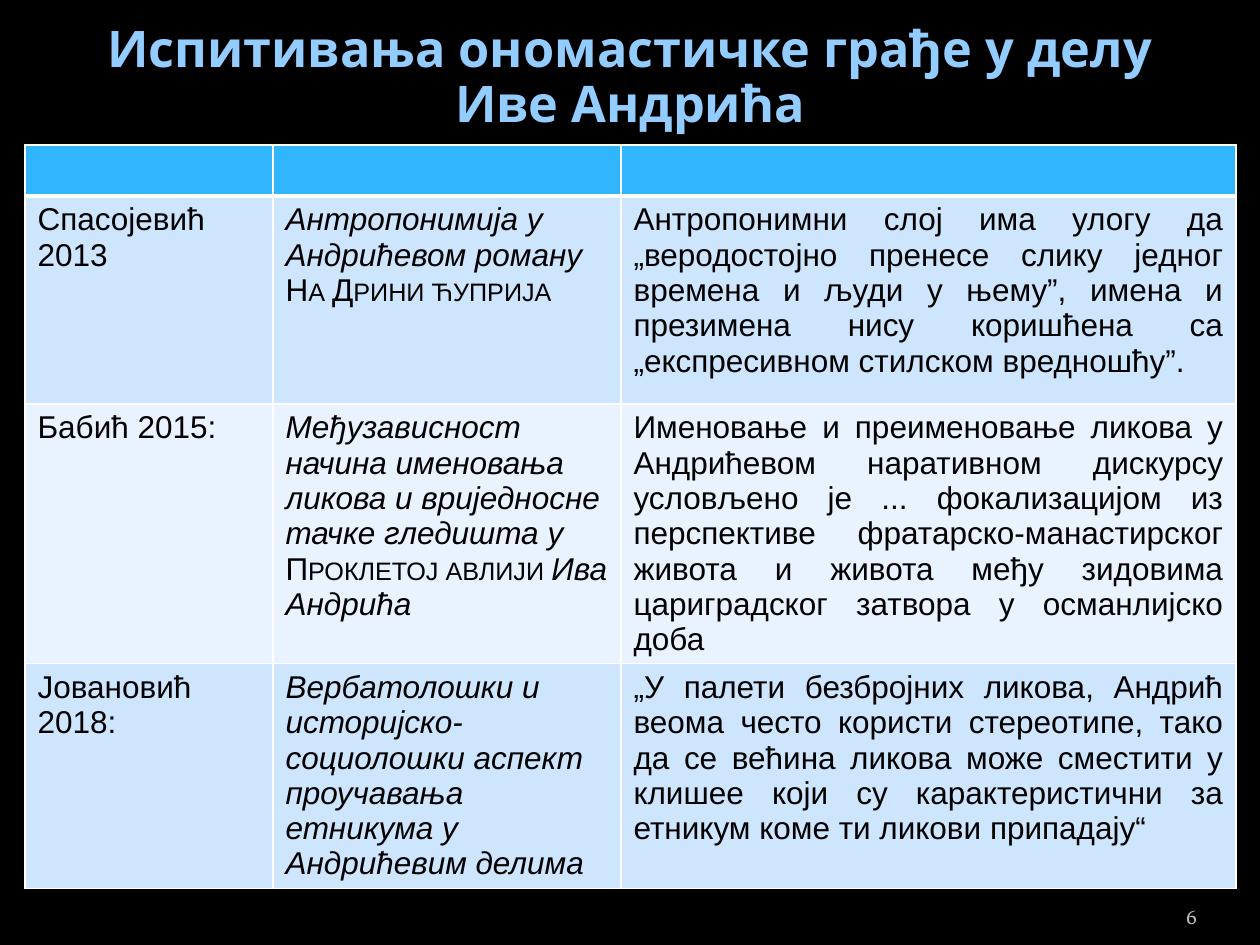
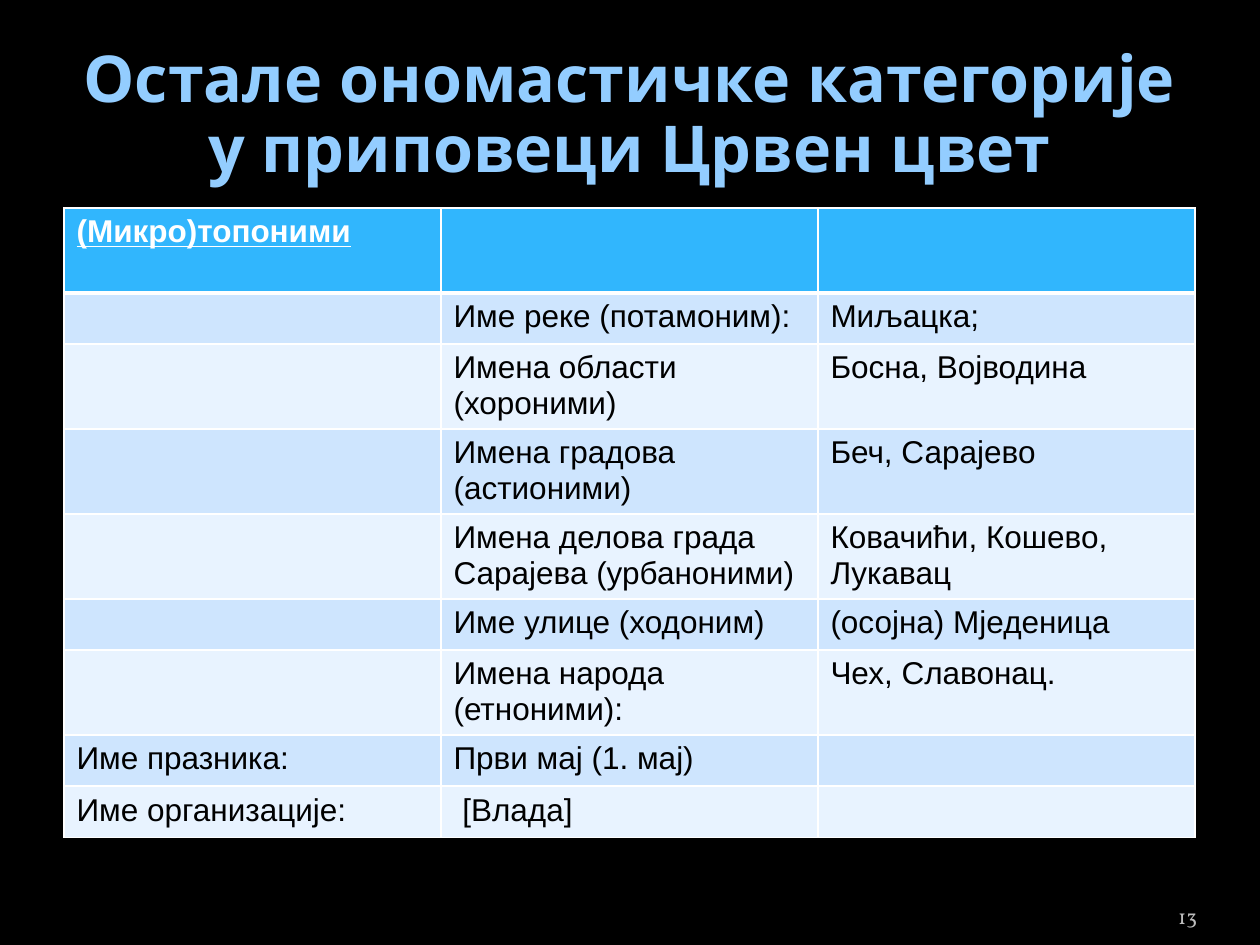
"""Builds two slides with tables on onomastic research in literary works."""
from lxml import etree
from pptx import Presentation
from pptx.dml.color import RGBColor
from pptx.enum.text import MSO_ANCHOR, MSO_AUTO_SIZE, PP_ALIGN
from pptx.oxml.ns import qn
from pptx.util import Pt

CENTER, RIGHT, JUSTIFY = PP_ALIGN.CENTER, PP_ALIGN.RIGHT, PP_ALIGN.JUSTIFY
MIDDLE, BOTTOM = MSO_ANCHOR.MIDDLE, MSO_ANCHOR.BOTTOM
NO_AUTOFIT = MSO_AUTO_SIZE.NONE
COLORS = {
    "background": "000000", "title": "93CDFF", "header": "31B6FD",
    "odd": "CEE5FE", "even": "E8F3FF", "rule": "FFFFFF",
    "header_text": "FFFFFF", "cell_text": "000000", "number": "BDBDBD",
}
TITLE_FONT, TABLE_FONT, NUMBER_FONT = "Open Sans", "Arial", "Vollkorn"
TITLE_ONLY = 5
PX_PER_INCH = 126


def px(length):
    return round(length * 914400 / PX_PER_INCH)


class Deck:
    def __init__(self):
        self.prs = Presentation()
        self.prs.slide_width, self.prs.slide_height = px(1260), px(945)
        self.slide = None
        background = self.prs.slide_master.background.fill
        background.solid()
        background.fore_color.rgb = self.color("background")

    @staticmethod
    def color(name):
        return RGBColor.from_string(COLORS[name])

    def add_slide(self):
        self.slide = self.prs.slides.add_slide(self.prs.slide_layouts[TITLE_ONLY])

    def add_run(self, paragraph, text, font, size, color, style=""):
        run = paragraph.add_run()
        run.text = text
        run.font.name, run.font.size = font, Pt(size)
        run.font.color.rgb = self.color(color)
        run.font.bold = "bold" in style
        run.font.italic = "italic" in style
        run.font.underline = "underline" in style
        if "small" in style:
            run.font._element.set("cap", "small")

    def add_title(self, text, size, top):
        title = self.slide.shapes.title
        title.left, title.top, title.width, title.height = (
            px(63), px(top), px(1134), px(157))
        frame = title.text_frame
        frame.word_wrap, frame.auto_size = True, NO_AUTOFIT
        frame.vertical_anchor = MIDDLE
        paragraph = frame.paragraphs[0]
        paragraph.alignment, paragraph.line_spacing = CENTER, 0.9
        self.add_run(paragraph, text, TITLE_FONT, size, "title", "bold")

    def add_number(self, number):
        box = self.slide.shapes.add_textbox(px(1092), px(885), px(105), px(50))
        frame = box.text_frame
        frame.word_wrap, frame.vertical_anchor = True, BOTTOM
        frame.margin_left = frame.margin_right = 0
        paragraph = frame.paragraphs[0]
        paragraph.alignment = RIGHT
        self.add_run(paragraph, number, NUMBER_FONT, 12, "number")

    def add_borders(self, cell, bottom_width):
        properties = cell._tc.get_or_add_tcPr()
        widths = {"lnL": 1, "lnR": 1, "lnT": 1, "lnB": bottom_width}
        for index, (side, width) in enumerate(widths.items()):
            line = etree.Element(qn(f"a:{side}"), w=str(Pt(width)))
            fill = etree.SubElement(line, qn("a:solidFill"))
            etree.SubElement(fill, qn("a:srgbClr"), val=COLORS["rule"])
            properties.insert(index, line)

    def add_table(self, left, top, widths, heights, rows, justified=None):
        table = self.slide.shapes.add_table(
            len(heights), len(widths), px(left), px(top),
            px(sum(widths)), px(sum(heights))).table
        for column, width in zip(table.columns, widths):
            column.width = px(width)
        for row, height in zip(table.rows, heights):
            row.height = px(height)
        for r, row in enumerate(rows):
            band = "header" if r == 0 else ("even", "odd")[r % 2]
            text_color = "cell_text" if r else "header_text"
            for c, content in enumerate(row):
                cell = table.cell(r, c)
                cell.fill.solid()
                cell.fill.fore_color.rgb = self.color(band)
                self.add_borders(cell, 1 if r else 3)
                paragraph = cell.text_frame.paragraphs[0]
                paragraph.font.size = Pt(18)
                if c == justified:
                    paragraph.alignment = JUSTIFY
                runs = [(content, "")] if isinstance(content, str) else content
                for text, style in runs:
                    if text:
                        self.add_run(paragraph, text, TABLE_FONT, 18,
                                     text_color, style)


STUDIES = [
    ("", "", ""),
    ("Спасојевић 2013",
     [("Антропонимија у Андрићевом роману ", "italic"),
      ("На Дрини ћуприја", "small")],
     "Aнтропонимни слој има улогу да „веродостојно пренесе слику једног "
     "времена и људи у њему”, имена и презимена нису коришћена са "
     "„експресивном стилском вредношћу”."),
    ("Бабић 2015:",
     [("Међузависност начина именовања ликова и вриједносне тачке гледишта у ",
       "italic"),
      ("Проклетој авлији ", "small"), ("Ива Андрића", "italic")],
     "Именовање и преименовање ликова у Андрићевом наративном дискурсу "
     "условљено је ... фокализацијом из перспективе фратарско-манастирског "
     "живота и живота међу зидовима цариградског затвора у османлијско доба"),
    ("Јовановић 2018:",
     [("Вербатолошки и историјско-социолошки аспект проучавања етникума у "
       "Андрићевим делима", "italic")],
     "„У палети безбројних ликова, Андрић веома често користи стереотипе, "
     "тако да се већина ликова може сместити у клишее који су "
     "карактеристични за етникум коме ти ликови припадају“"),
]
CATEGORIES = [
    ([("(Микро)топоними", "bold underline")], "", ""),
    ("", "Име реке (потамоним):", "Миљацка;"),
    ("", "Имена области (хороними)", "Босна, Војводина"),
    ("", "Имена градова (астионими)", "Беч, Сарајево"),
    ("", "Имена делова града Сарајева (урбаноними)", "Ковачићи, Кошево, Лукавац"),
    ("", "Име улице (ходоним)", "(осојна) Мједеница"),
    ("", "Имена народа (етноними):", "Чех, Славонац."),
    ("Име празника:", "Први мај (1. мај)", ""),
    ("Име организације:", " [Влада]", ""),
]


def main():
    deck = Deck()

    deck.add_slide()
    deck.add_title("Испитивања ономастичке грађе у делу Иве Андрића", 28.8, 0)
    deck.add_table(25, 145, [248, 348, 615], [47, 208, 259, 225], STUDIES,
                   justified=2)
    deck.add_number("6")

    deck.add_slide()
    deck.add_title("Остале ономастичке категорије у приповеци Црвен цвет", 36.9, 38)
    one_line, two_lines = 50, 85
    heights = [two_lines, one_line, two_lines, two_lines, two_lines,
               one_line, two_lines, one_line, one_line]
    deck.add_table(64, 208, [377] * 3, heights, CATEGORIES)
    deck.add_number("13")

    deck.prs.save("out.pptx")


if __name__ == "__main__":
    main()
